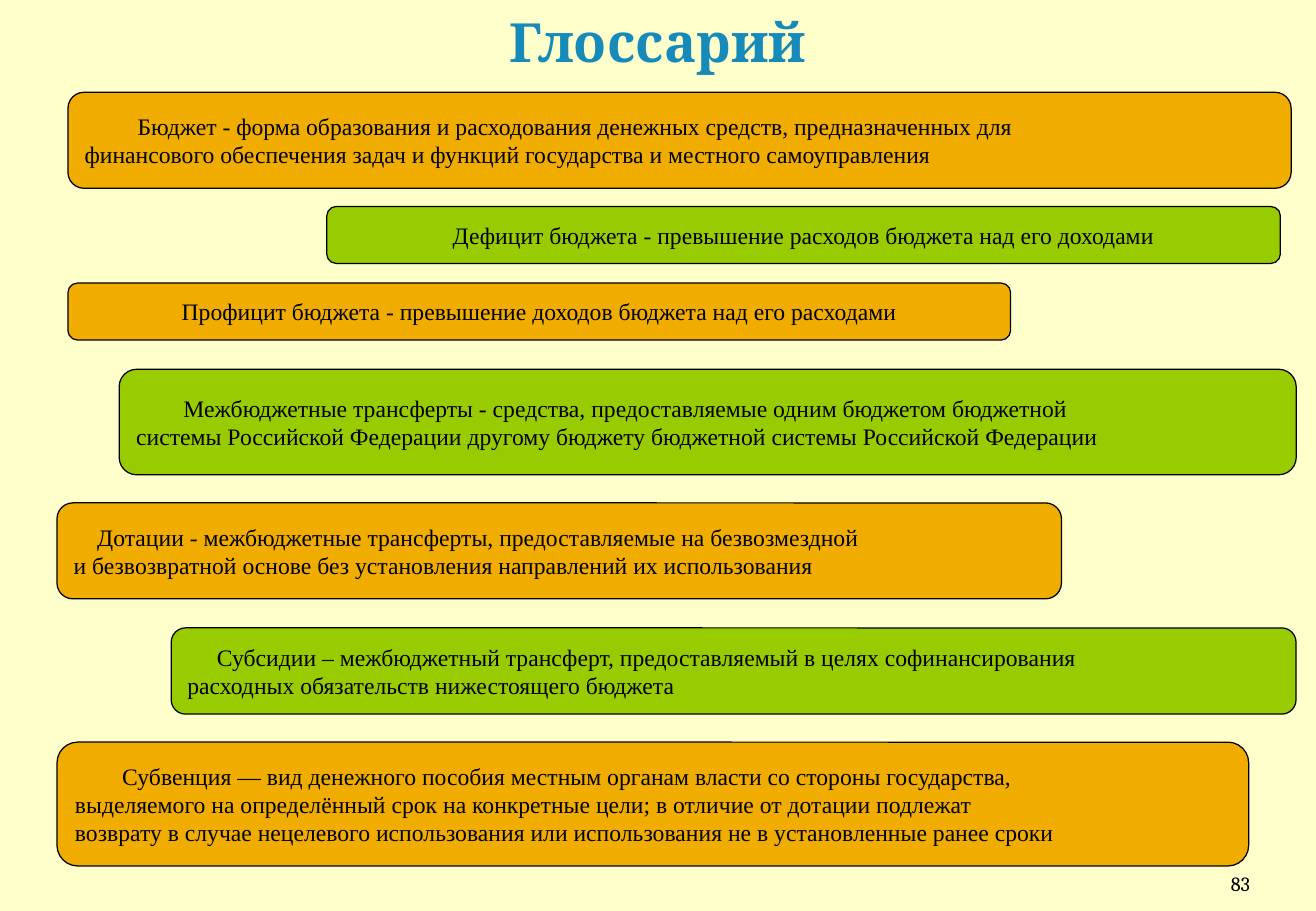
from dataclasses import dataclass

from pptx import Presentation
from pptx.dml.color import RGBColor
from pptx.enum.shapes import MSO_SHAPE
from pptx.enum.text import MSO_ANCHOR, PP_ALIGN
from pptx.slide import Slide
from pptx.text.text import TextFrame
from pptx.util import Pt

AMBER, GREEN, BLACK, BLUE, CREAM = "F0AD00", "99CC00", "000000", "168BBA", "FFFFCC"
HEAD, BODY = "Cambria", "Times New Roman"


@dataclass
class Style:
    font: str
    size: float
    color: str
    align: PP_ALIGN
    anchor: MSO_ANCHOR
    bold: bool = False


@dataclass
class Term:
    left: float
    top: float
    width: float
    height: float
    lines: list[str]
    indent: float = 0


def paint(color: str) -> RGBColor:
    return RGBColor.from_string(color)


def write(frame: TextFrame, lines: list[str], style: Style, indent: float = 0) -> None:
    frame.word_wrap = True
    frame.vertical_anchor = style.anchor
    for i, line in enumerate(lines):
        para = frame.paragraphs[0] if i == 0 else frame.add_paragraph()
        para.alignment = style.align
        if i == 0 and indent:
            para._p.get_or_add_pPr().set("indent", str(Pt(indent)))
        run = para.add_run()
        run.text = line
        run.font.name = style.font
        run.font.size = Pt(style.size)
        run.font.bold = style.bold
        run.font.color.rgb = paint(style.color)


def add_label(slide: Slide, left: float, top: float, width: float, height: float,
              text: str, style: Style, inset: float) -> None:
    box = slide.shapes.add_textbox(Pt(left), Pt(top), Pt(width), Pt(height))
    box.text_frame.margin_left = box.text_frame.margin_right = Pt(inset)
    write(box.text_frame, [text], style)


def add_term(slide: Slide, term: Term, color: str) -> None:
    card = slide.shapes.add_shape(MSO_SHAPE.ROUNDED_RECTANGLE, Pt(term.left), Pt(term.top),
                                  Pt(term.width), Pt(term.height))
    card.shadow.inherit = False
    card.fill.solid()
    card.fill.fore_color.rgb = paint(color)
    card.line.color.rgb = paint(BLACK)
    card.line.width = Pt(0.75)
    align = PP_ALIGN.JUSTIFY if len(term.lines) > 1 else PP_ALIGN.CENTER
    write(card.text_frame, term.lines, Style(BODY, 14, BLACK, align, MSO_ANCHOR.MIDDLE),
          term.indent)


TERMS = [
    Term(40.3, 54.7, 725, 56.9, [
        "Бюджет - форма образования и расходования денежных средств, предназначенных для",
        "финансового обеспечения задач и функций государства и местного самоуправления",
    ], 31.5),
    Term(193.7, 122.4, 565.2, 33.8, [
        "Дефицит бюджета - превышение расходов бюджета над его доходами"]),
    Term(40.3, 167.8, 558.7, 33.8, [
        "Профицит бюджета - превышение доходов бюджета над его расходами"]),
    Term(70.6, 218.9, 697.7, 62.6, [
        "Межбюджетные трансферты - средства, предоставляемые одним бюджетом бюджетной",
        "системы Российской Федерации другому бюджету бюджетной системы Российской Федерации",
    ], 28),
    Term(33.8, 298.1, 595.4, 56.9, [
        "Дотации - межбюджетные трансферты, предоставляемые на безвозмездной",
        "и безвозвратной основе без установления направлений их использования",
    ], 14),
    Term(101.5, 372.2, 666.7, 51.1, [
        "Субсидии – межбюджетный трансферт, предоставляемый в целях софинансирования",
        "расходных обязательств нижестоящего бюджета",
    ], 17.5),
    Term(33.8, 439.9, 706.3, 73.4, [
        "Субвенция — вид денежного пособия местным органам власти со стороны государства,",
        "выделяемого на определённый срок на конкретные цели; в отличие от дотации подлежат",
        "возврату в случае нецелевого использования или использования не в установленные "
        "ранее сроки",
    ], 28),
]


def main() -> None:
    deck = Presentation()
    deck.slide_width, deck.slide_height = Pt(780), Pt(540)
    slide = deck.slides.add_slide(deck.slide_layouts[6])
    slide.background.fill.solid()
    slide.background.fill.fore_color.rgb = paint(CREAM)

    # Page number and title
    add_label(slide, 676.1, 505.4, 64.8, 28.8, "83",
              Style(HEAD, 12, BLACK, PP_ALIGN.RIGHT, MSO_ANCHOR.BOTTOM), 0)
    add_label(slide, 38.9, 0, 702, 49, "Глоссарий",
              Style(HEAD, 32, BLUE, PP_ALIGN.CENTER, MSO_ANCHOR.MIDDLE, True), 7.2)

    # Glossary cards in alternating colours
    for i, term in enumerate(TERMS):
        add_term(slide, term, GREEN if i % 2 else AMBER)

    deck.save("out.pptx")


if __name__ == "__main__":
    main()
